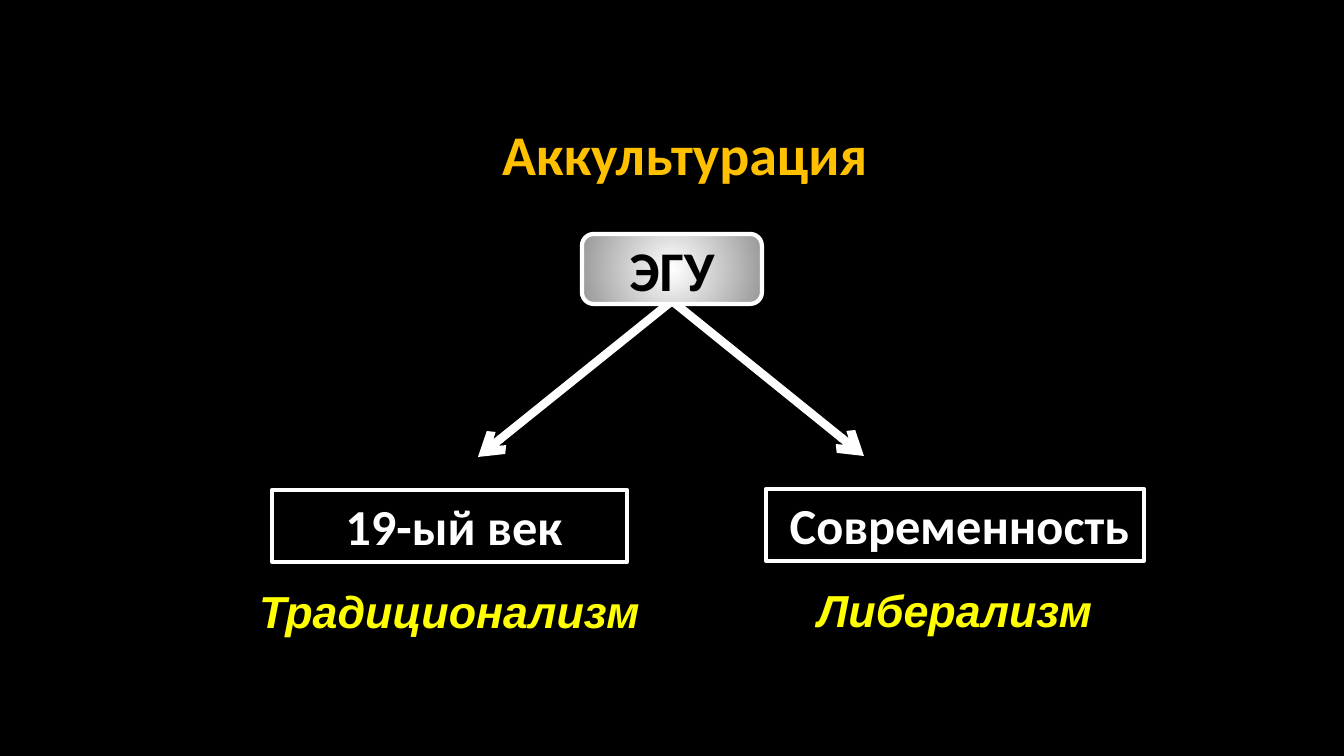
from lxml.etree import SubElement
from pptx import Presentation
from pptx.dml.color import RGBColor
from pptx.enum.shapes import MSO_CONNECTOR as Connector, MSO_SHAPE as Shape
from pptx.enum.text import MSO_ANCHOR as Anchor, MSO_AUTO_SIZE as AutoSize, PP_ALIGN as Align
from pptx.oxml.ns import qn
from pptx.util import Emu, Pt

COLORS = {
    "black": "000000",
    "white": "FFFFFF",
    "gray": "979797",
    "gold": "FFC000",
    "yellow": "FFFF00",
}
EMU_PER_PX = 914400 / 100.8
INSET_X, INSET_Y = 10, 5


def px(length):
    return Emu(round(length * EMU_PER_PX))


def color(name):
    return RGBColor.from_string(COLORS[name])


def set_text(shape, text, size, color_name, font="Calibri", align=Align.CENTER,
             anchor=Anchor.TOP, wrap=True, italic=False, indent=0):
    frame = shape.text_frame
    frame.auto_size = AutoSize.NONE
    frame.word_wrap = wrap
    frame.vertical_anchor = anchor
    frame.margin_left = px(INSET_X + indent)
    frame.margin_right = px(INSET_X)
    frame.margin_top = frame.margin_bottom = px(INSET_Y)
    para = frame.paragraphs[0]
    para.text = text
    para.alignment = align
    para.font.name = font
    para.font.size = Pt(size)
    para.font.bold = True
    para.font.italic = italic
    para.font.color.rgb = color(color_name)


def add_framed_shape(page, kind, box):
    shape = page.shapes.add_shape(kind, *map(px, box))
    shape.shadow.inherit = False
    shape.line.color.rgb = color("white")
    shape.line.width = Pt(3)
    return shape


def add_title(page, box, text):
    title = page.shapes.title
    title.left, title.top, title.width, title.height = map(px, box)
    set_text(title, text, 40, "gold", align=Align.LEFT, wrap=False)


def add_root(page, box, text):
    root = add_framed_shape(page, Shape.ROUNDED_RECTANGLE, box)
    root.fill.gradient()
    for stop, name in zip(root.fill.gradient_stops, ("white", "gray")):
        stop.color.rgb = color(name)
    # Radial gradient from the centre
    gradient = root.element.spPr.find(qn("a:gradFill"))
    gradient.remove(gradient.find(qn("a:lin")))
    radial = SubElement(gradient, qn("a:path"), path="circle")
    SubElement(radial, qn("a:fillToRect"), l="50000", t="50000", r="50000", b="50000")
    set_text(root, text, 40, "black", anchor=Anchor.MIDDLE)


def add_arrow(page, start, end):
    arrow = page.shapes.add_connector(Connector.STRAIGHT, *map(px, start + end))
    arrow.line.color.rgb = color("white")
    arrow.line.width = Pt(6)
    SubElement(arrow.line._get_or_add_ln(), qn("a:tailEnd"), type="arrow")
    SubElement(arrow.element.spPr, qn("a:effectLst"))


def add_branch(page, box, start, tip_x, label, caption, caption_width):
    left, top, width, height = box
    # Arrow from the root
    add_arrow(page, start, (tip_x, top - 33))
    # Framed period
    period = add_framed_shape(page, Shape.RECTANGLE, box)
    period.fill.solid()
    period.fill.fore_color.rgb = color("black")
    set_text(period, label, 36, "white", indent=9)
    # Caption centred below
    caption_box = (left + (width - caption_width) / 2, top + 89, caption_width, 65)
    note = page.shapes.add_textbox(*map(px, caption_box))
    set_text(note, caption, 32, "yellow", font="Arial", wrap=False, italic=True)


def main():
    deck = Presentation()
    deck.slide_width, deck.slide_height = px(1344), px(756)
    page = deck.slides.add_slide(deck.slide_layouts[5])
    page.background.fill.solid()
    page.background.fill.fore_color.rgb = color("black")

    add_title(page, (492, 114, 390, 78), "Аккультурация")
    root_box = (582, 234, 180, 70)
    fork = (672, 301)
    add_branch(page, (272, 490, 355, 72), fork, 478,
               "19-ый век", "Традиционализм", 404)
    add_branch(page, (766, 489, 378, 72), fork, 864,
               "Современность", "Либерализм", 298)
    add_root(page, root_box, "ЭГУ")
    deck.save("out.pptx")


if __name__ == "__main__":
    main()
